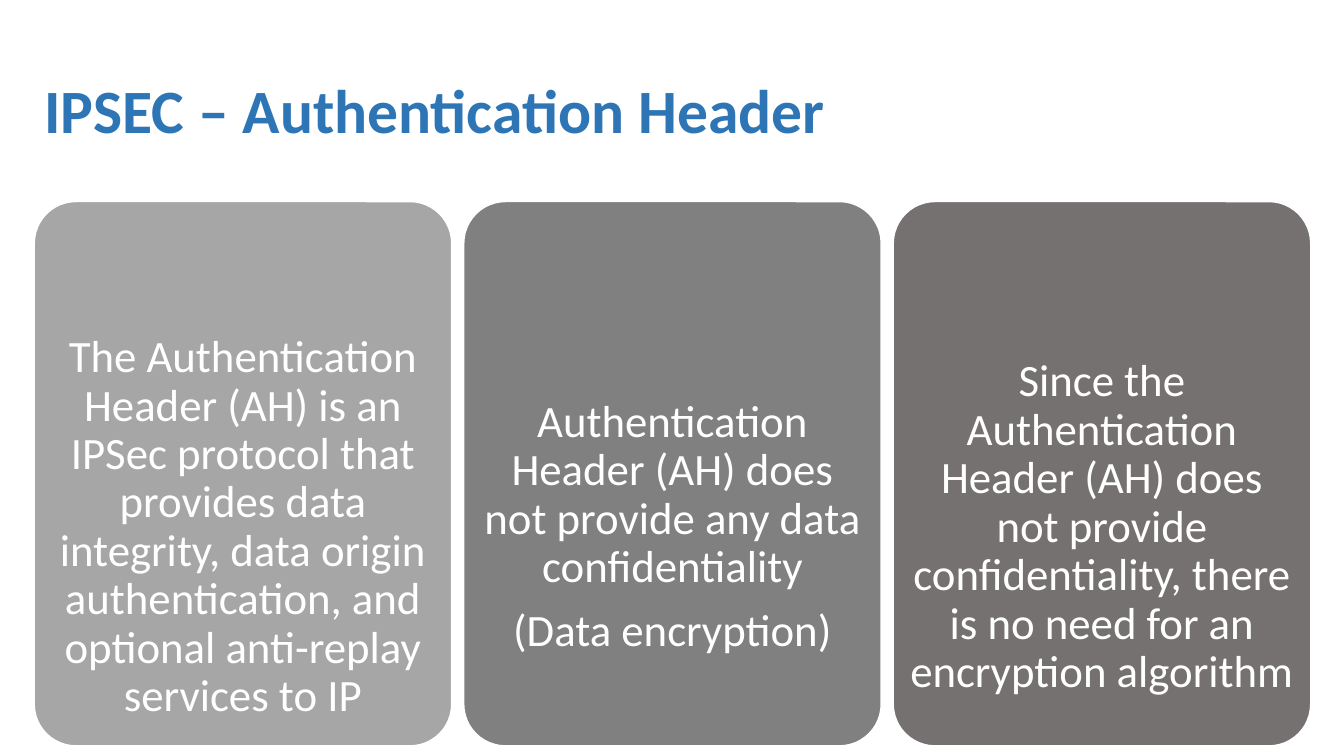
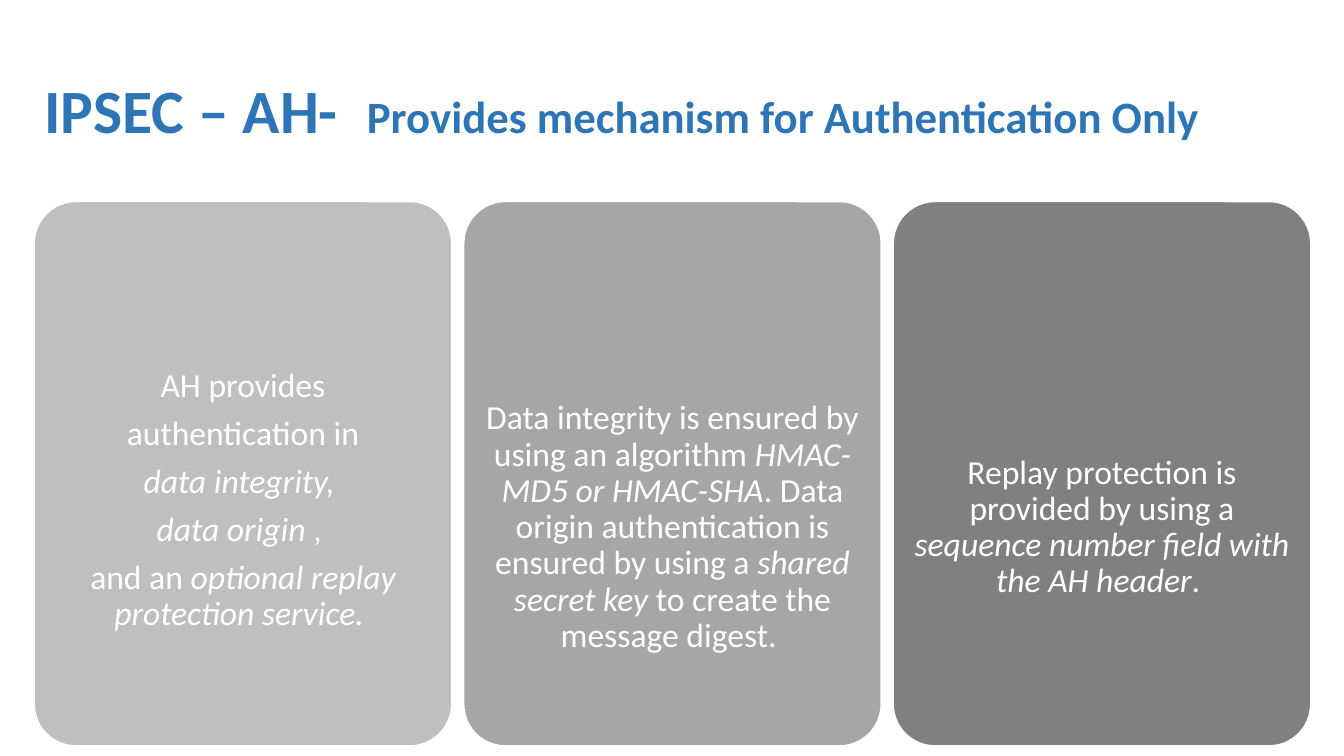
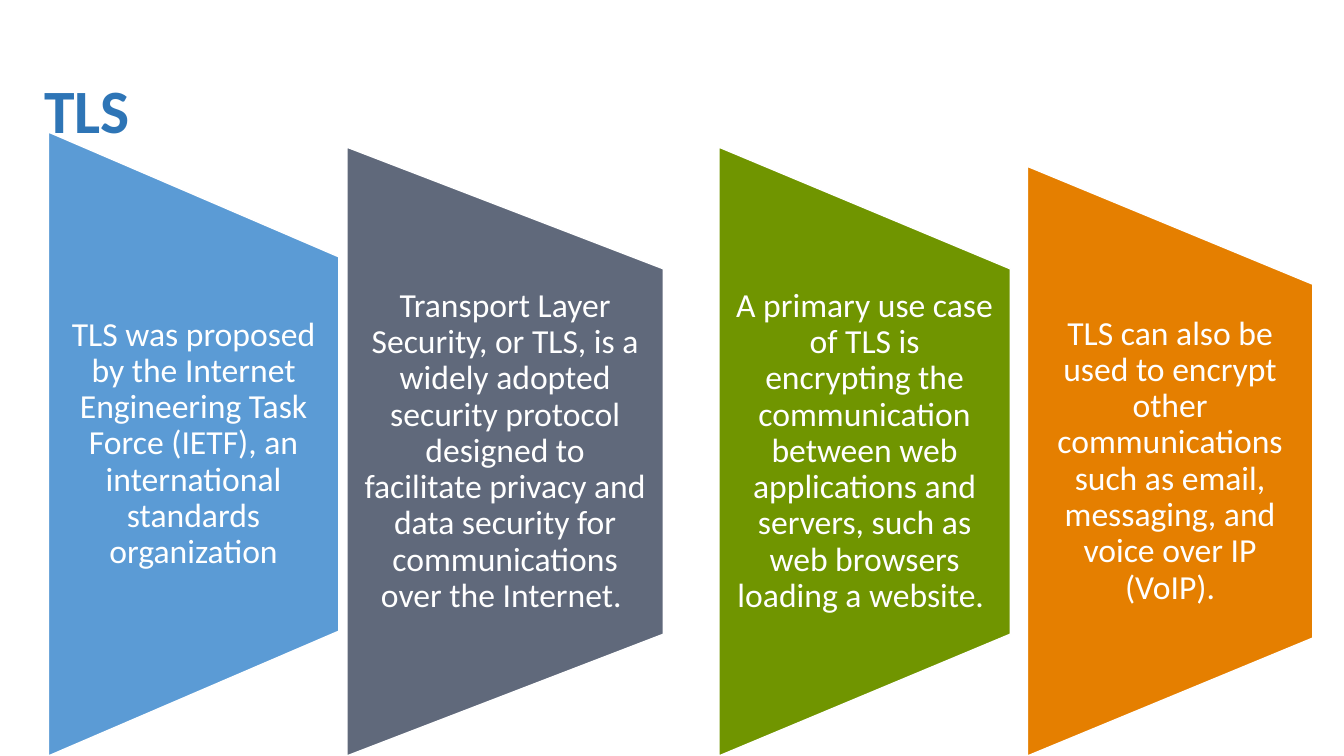
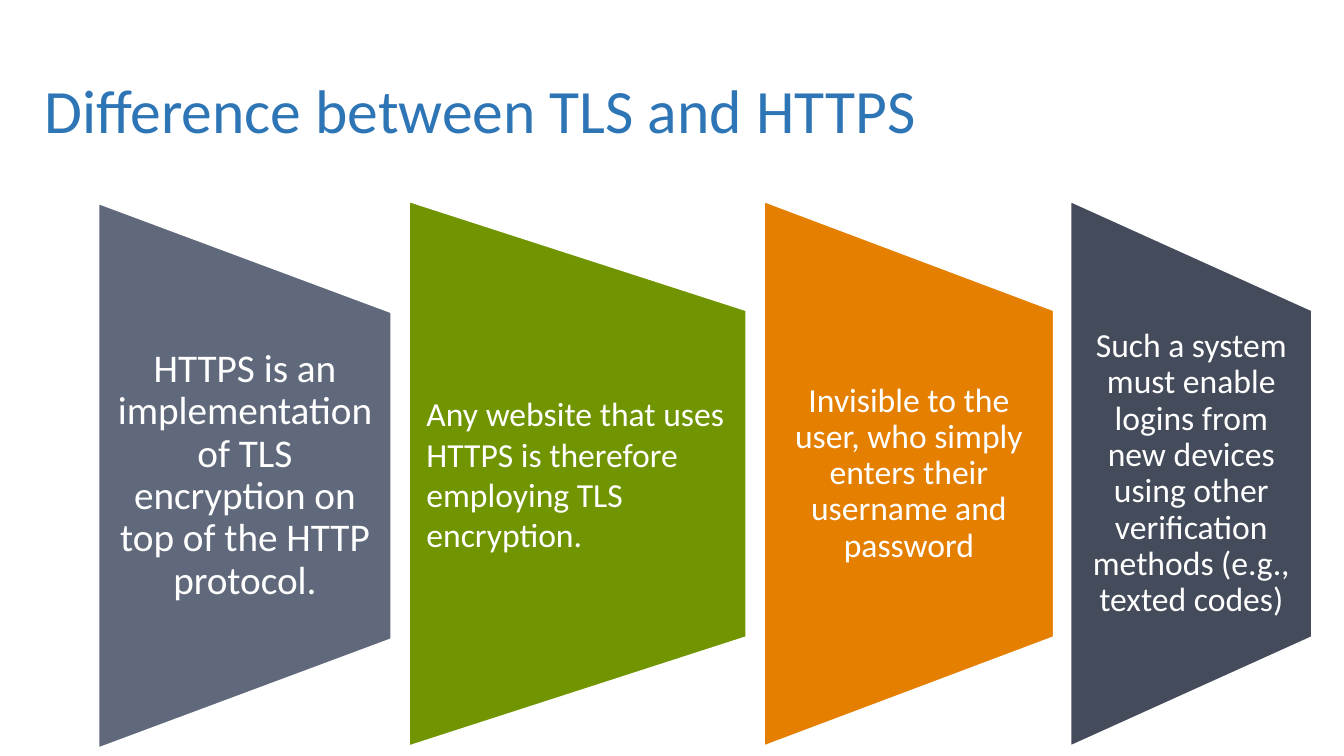
"""Builds four slides on IPSec authentication headers and TLS."""
from dataclasses import dataclass

from lxml import etree
from pptx import Presentation
from pptx import util as u
from pptx.dml.color import RGBColor
from pptx.enum import shapes, text
from pptx.oxml.ns import qn


@dataclass(frozen=True)
class Theme:
    font: str = "Calibri"
    title: str = "2E75B6"
    white: str = "FFFFFF"
    silver: str = "BFBFBF"
    light_gray: str = "A6A6A6"
    gray: str = "808080"
    warm_gray: str = "767171"
    blue: str = "5B9BD5"
    slate: str = "60697B"
    green: str = "709500"
    orange: str = "E57F00"
    navy: str = "444B5A"
    title_size: int = 44
    large: int = 32
    medium: int = 28
    body: int = 24
    line_spacing: float = 0.9
    space_ratio: float = 0.35


@dataclass(frozen=True)
class Run:
    text: str
    size: int = 0
    italic: bool = False
    bold: bool = False


@dataclass(frozen=True)
class Card:
    fill: str
    paragraphs: list
    size: int = Theme.body
    extra_bottom: float = 0


@dataclass(frozen=True)
class Panel:
    box: tuple
    fill: str
    content: str
    size: int = Theme.body
    plain: bool = False


THEME = Theme()
TITLE_BOX = (0.34, 0.4, 12.68, 1.45)
TITLE_TAB = 3.2
CARD_LEFT, CARD_TOP, CARD_WIDTH, CARD_HEIGHT, CARD_GAP = 0.34, 2, 4.14, 5.4, 0.12
CARD_INSETS = (0.04, 2.19, 0.04, 1.12)
PANEL_INSETS = (0.17, 1.08, 0.17, 1.08)
PANEL_SLOPE = 0.2


def italic(content):
    return Run(content, italic=True)


SLIDES = [
    ([Run("IPSEC – Authentication Header", bold=True)], [
        Card(THEME.light_gray, [[Run(
            "The Authentication Header (AH) is an IPSec protocol that provides data integrity, "
            "data origin authentication, and optional anti-replay services to IP")]], THEME.large),
        Card(THEME.gray, [
            [Run("Authentication Header (AH) does not provide any data confidentiality")],
            [Run("(Data encryption)")]], THEME.large),
        Card(THEME.warm_gray, [[Run(
            "Since the Authentication Header (AH) does not provide confidentiality, "
            "there is no need for an encryption algorithm")]], THEME.large),
    ]),
    ([Run("IPSEC – AH-\t", bold=True),
      Run("Provides mechanism for Authentication Only", THEME.large, bold=True)], [
        Card(THEME.silver, [
            [Run("AH provides")],
            [Run("authentication in")],
            [italic("data integrity, ")],
            [italic("data origin "), Run(", ")],
            [Run("and an "), italic("optional replay protection service. ")]], extra_bottom=0.54),
        Card(THEME.light_gray, [[
            Run("Data integrity is ensured by using an algorithm "),
            italic("HMAC-MD5 or HMAC-SHA"),
            Run(". Data origin authentication is ensured by using a "),
            italic("shared secret key "),
            Run("to create the message digest. ")]]),
        Card(THEME.gray, [[
            Run("Replay protection is provided by using a "),
            italic("sequence number field with the AH header"),
            Run(". ")]]),
    ]),
    ([Run("TLS", bold=True)], [
        Panel((0.48, 1.31, 2.88, 6.19), THEME.blue,
              "TLS was proposed by the Internet Engineering Task Force (IETF), "
              "an international standards organization"),
        Panel((3.44, 1.46, 3.14, 6.04), THEME.slate,
              "Transport Layer Security, or TLS, is a widely adopted security protocol designed to "
              "facilitate privacy and data security for communications over the Internet. "),
        Panel((7.13, 1.46, 2.89, 6.04), THEME.green,
              "A primary use case of TLS is encrypting the communication between web applications "
              "and servers, such as web browsers loading a website. "),
        Panel((10.19, 1.65, 2.83, 5.85), THEME.orange,
              "TLS can also be used to encrypt other communications such as email, messaging, "
              "and voice over IP (VoIP)."),
    ]),
    ([Run("Difference between TLS and HTTPS")], [
        Panel((0.98, 2.02, 2.9, 5.4), THEME.slate,
              "HTTPS is an implementation of TLS encryption on top of the HTTP protocol.",
              THEME.medium),
        Panel((4.06, 2, 3.34, 5.4), THEME.green,
              "Any website that uses HTTPS is therefore employing TLS encryption.", plain=True),
        Panel((7.58, 2, 2.87, 5.4), THEME.orange,
              "Invisible to the user, who simply enters their username and password"),
        Panel((10.62, 2, 2.39, 5.4), THEME.navy,
              "Such a system must enable logins from new devices using other verification methods "
              "(e.g., texted codes)"),
    ]),
]


def color(value):
    return RGBColor.from_string(value)


def write(frame, paragraphs, size, ink, insets):
    frame.word_wrap = True
    frame.vertical_anchor = text.MSO_ANCHOR.MIDDLE
    frame.margin_left, frame.margin_top, frame.margin_right, frame.margin_bottom = map(
        u.Inches, insets)
    for index, runs in enumerate(paragraphs):
        paragraph = frame.add_paragraph() if index else frame.paragraphs[0]
        paragraph.alignment = text.PP_ALIGN.LEFT
        for part in runs:
            run = paragraph.add_run()
            run.text = part.text
            run.font.name = THEME.font
            run.font.size = u.Pt(part.size or size)
            run.font.bold = part.bold
            run.font.italic = part.italic
            run.font.color.rgb = color(ink)


def center(frame, size):
    for paragraph in frame.paragraphs:
        paragraph.alignment = text.PP_ALIGN.CENTER
        paragraph.line_spacing = THEME.line_spacing
        paragraph.space_after = u.Pt(size * THEME.space_ratio)


def paint(shape, fill):
    shape.shadow.inherit = False
    shape.fill.solid()
    shape.fill.fore_color.rgb = color(fill)
    shape.line.color.rgb = color(THEME.white)
    shape.line.width = u.Pt(1)


def add_title(slide, runs):
    frame = slide.shapes.add_textbox(*map(u.Inches, TITLE_BOX)).text_frame
    write(frame, [runs], THEME.title_size, THEME.title, (0.1, 0.05, 0.1, 0.05))
    paragraph = frame.paragraphs[0]
    paragraph.line_spacing = THEME.line_spacing
    if any("\t" in run.text for run in runs):
        tabs = etree.SubElement(paragraph._p.get_or_add_pPr(), qn("a:tabLst"))
        etree.SubElement(tabs, qn("a:tab"), pos=str(u.Inches(TITLE_TAB)), algn="l")


def add_card(slide, card, index):
    left = CARD_LEFT + index * (CARD_WIDTH + CARD_GAP)
    shape = slide.shapes.add_shape(
        shapes.MSO_SHAPE.ROUNDED_RECTANGLE,
        *map(u.Inches, (left, CARD_TOP, CARD_WIDTH, CARD_HEIGHT)))
    shape.adjustments[0] = 0.1
    paint(shape, card.fill)
    *sides, bottom = CARD_INSETS
    write(shape.text_frame, card.paragraphs, card.size, THEME.white,
          (*sides, bottom + card.extra_bottom))
    center(shape.text_frame, card.size)


def add_panel(slide, panel):
    left, top, width, height = map(u.Inches, panel.box)
    right, bottom, drop = left + width, top + height, int(height * PANEL_SLOPE)
    builder = slide.shapes.build_freeform(left, bottom)
    builder.add_line_segments([(left, top), (right, top + drop), (right, bottom - drop)])
    shape = builder.convert_to_shape()
    paint(shape, panel.fill)
    write(shape.text_frame, [[Run(panel.content)]], panel.size, THEME.white, PANEL_INSETS)
    if not panel.plain:
        center(shape.text_frame, panel.size)


def main():
    presentation = Presentation()
    presentation.slide_width, presentation.slide_height = u.Inches(13.33), u.Inches(7.5)
    for title, items in SLIDES:
        slide = presentation.slides.add_slide(presentation.slide_layouts[6])
        add_title(slide, title)
        for index, item in enumerate(items):
            if isinstance(item, Card):
                add_card(slide, item, index)
            else:
                add_panel(slide, item)
    presentation.save("out.pptx")


if __name__ == "__main__":
    main()
